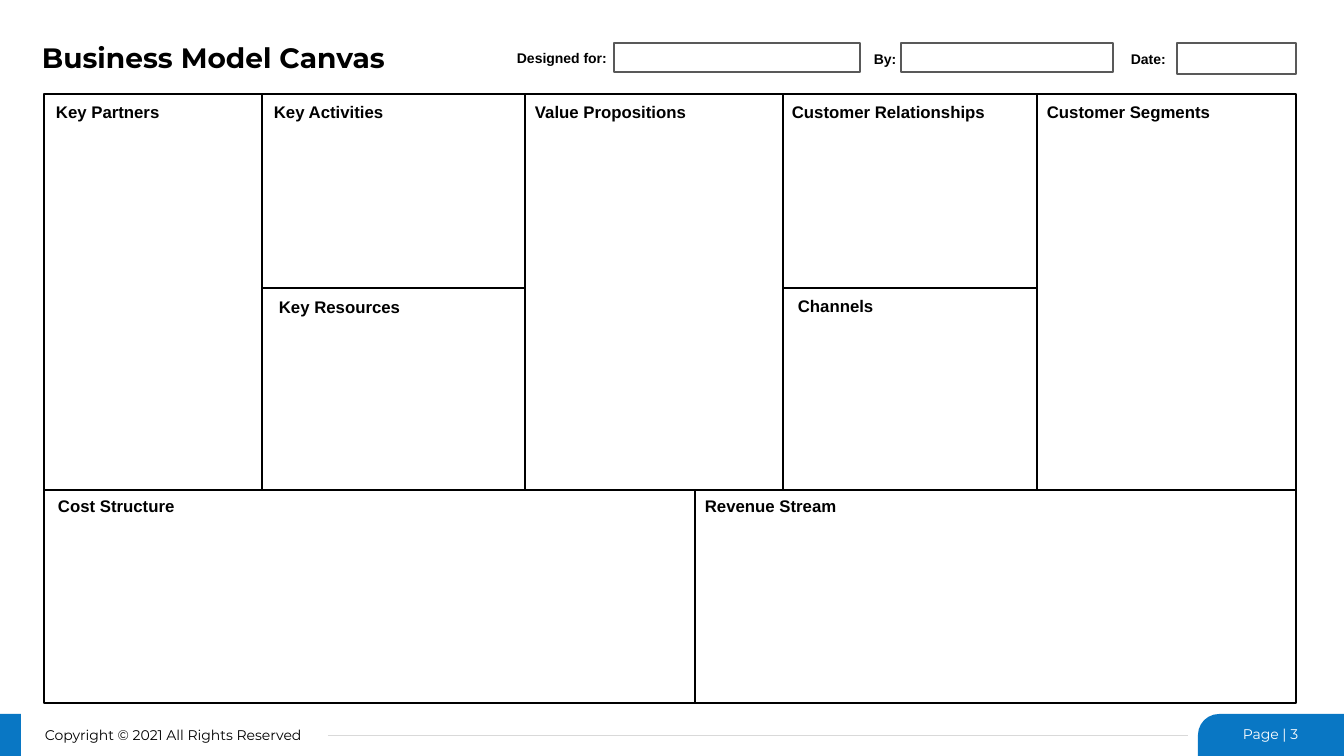
from pptx import Presentation
from pptx.dml.color import RGBColor
from pptx.enum.shapes import MSO_CONNECTOR, MSO_SHAPE
from pptx.enum.text import MSO_ANCHOR, PP_ALIGN
from pptx.oxml.ns import qn
from pptx.util import Pt
from lxml import etree

RECTANGLE, ROUND_CORNER = MSO_SHAPE.RECTANGLE, MSO_SHAPE.ROUND_1_RECTANGLE
STRAIGHT = MSO_CONNECTOR.STRAIGHT
TOP, MIDDLE = MSO_ANCHOR.TOP, MSO_ANCHOR.MIDDLE
LEFT, RIGHT = PP_ALIGN.LEFT, PP_ALIGN.RIGHT

EMU_PER_PX = 914400 / 100.8
BLACK, WHITE, BLUE, GRAY, PALE = "000000", "FFFFFF", "0977C4", "595959", "D9D9D9"

# Canvas edges in px
COLUMNS = [44, 262, 525, 783, 1037, 1296]
CANVAS_TOP, HALFWAY, LOWER_TOP, CANVAS_BOTTOM = 94, 288, 490, 703
SPLIT = 695

# heading, panel left, top, right, bottom, heading left, heading top
PANELS = [
    ("Key Partners", COLUMNS[0], CANVAS_TOP, COLUMNS[1], LOWER_TOP, 46, 97),
    ("Key Activities", COLUMNS[1], CANVAS_TOP, COLUMNS[2], HALFWAY, 264, 97),
    ("Key Resources", COLUMNS[1], HALFWAY, COLUMNS[2], LOWER_TOP, 269, 292),
    ("Value Propositions", COLUMNS[2], CANVAS_TOP, COLUMNS[3], LOWER_TOP, 525, 97),
    ("Customer Relationships", COLUMNS[3], CANVAS_TOP, COLUMNS[4], HALFWAY, 782, 97),
    ("Channels", COLUMNS[3], HALFWAY, COLUMNS[4], LOWER_TOP, 788, 291),
    ("Customer Segments", COLUMNS[4], CANVAS_TOP, COLUMNS[5], LOWER_TOP, 1037, 97),
    ("Cost Structure", COLUMNS[0], LOWER_TOP, SPLIT, CANVAS_BOTTOM, 48, 491),
    ("Revenue Stream", SPLIT, LOWER_TOP, COLUMNS[5], CANVAS_BOTTOM, 695, 491),
]

# label, label place, entry box place (left, top, width, height)
FIELDS = [
    ("Designed for:", (507, 45, 111, 27), (614, 43, 246, 29)),
    ("By:", (864, 46, 43, 27), (901, 43, 212, 29)),
    ("Date:", (1121, 46, 55, 27), (1177, 43, 119, 31)),
]


def px(length):
    return round(length * EMU_PER_PX)


def color(value):
    return RGBColor.from_string(value)


def add_box(page, place, fill, line=None, kind=RECTANGLE):
    box = page.shapes.add_shape(kind, *map(px, place))
    box.shadow.inherit = False
    box.fill.solid()
    box.fill.fore_color.rgb = color(fill)
    if line:
        box.line.color.rgb = color(line)
        box.line.width = Pt(1)
    else:
        box.line.fill.background()
    return box


def add_text(page, text, place, size, font="Arial", ink=BLACK, bold=True,
             wrap=False, anchor=TOP, align=LEFT):
    frame = page.shapes.add_textbox(*map(px, place)).text_frame
    frame.word_wrap = wrap
    frame.vertical_anchor = anchor
    para = frame.paragraphs[0]
    para.text = text
    para.alignment = align
    para.font.name = font
    para.font.size = Pt(size)
    para.font.bold = bold
    para.font.color.rgb = color(ink)
    return para


def add_footer(page):
    tab = add_box(page, (1198, 714, 146, 42), BLUE, kind=ROUND_CORNER)
    tab.adjustments[0] = 0.5
    tab._element.spPr.find(qn("a:xfrm")).set("flipH", "1")
    add_box(page, (0, 714, 21, 42), BLUE)
    rule = page.shapes.add_connector(STRAIGHT, *map(px, (328, 735, 1188, 735)))
    rule.line.color.rgb = color(PALE)
    rule.line.width = Pt(0.5)
    etree.SubElement(rule._element.spPr, qn("a:effectLst"))
    add_text(page, "Copyright © 2021 All Rights Reserved", (35, 722, 283, 27), 10,
             font="Montserrat", bold=False, wrap=True)
    add_text(page, "Page | 3", (1197, 714, 111, 40), 10, font="Montserrat",
             ink=WHITE, bold=False, wrap=True, anchor=MIDDLE, align=RIGHT)


def main():
    deck = Presentation()
    deck.slide_width, deck.slide_height = px(1344), px(756)
    page = deck.slides.add_slide(deck.slide_layouts[6])

    add_footer(page)
    title = add_text(page, "Business Model Canvas", (32, 32, 460, 54), 20,
                     font="Montserrat", wrap=True, anchor=MIDDLE)
    title.line_spacing = 0.9

    for heading, left, top, right, bottom, text_left, text_top in PANELS:
        add_box(page, (left, top, right - left, bottom - top), WHITE, BLACK)
        add_text(page, heading, (text_left, text_top, right - text_left, 30), 12)

    for label, label_place, entry_place in FIELDS:
        add_box(page, entry_place, WHITE, GRAY)
        add_text(page, label, label_place, 10)

    deck.save("out.pptx")


if __name__ == "__main__":
    main()
